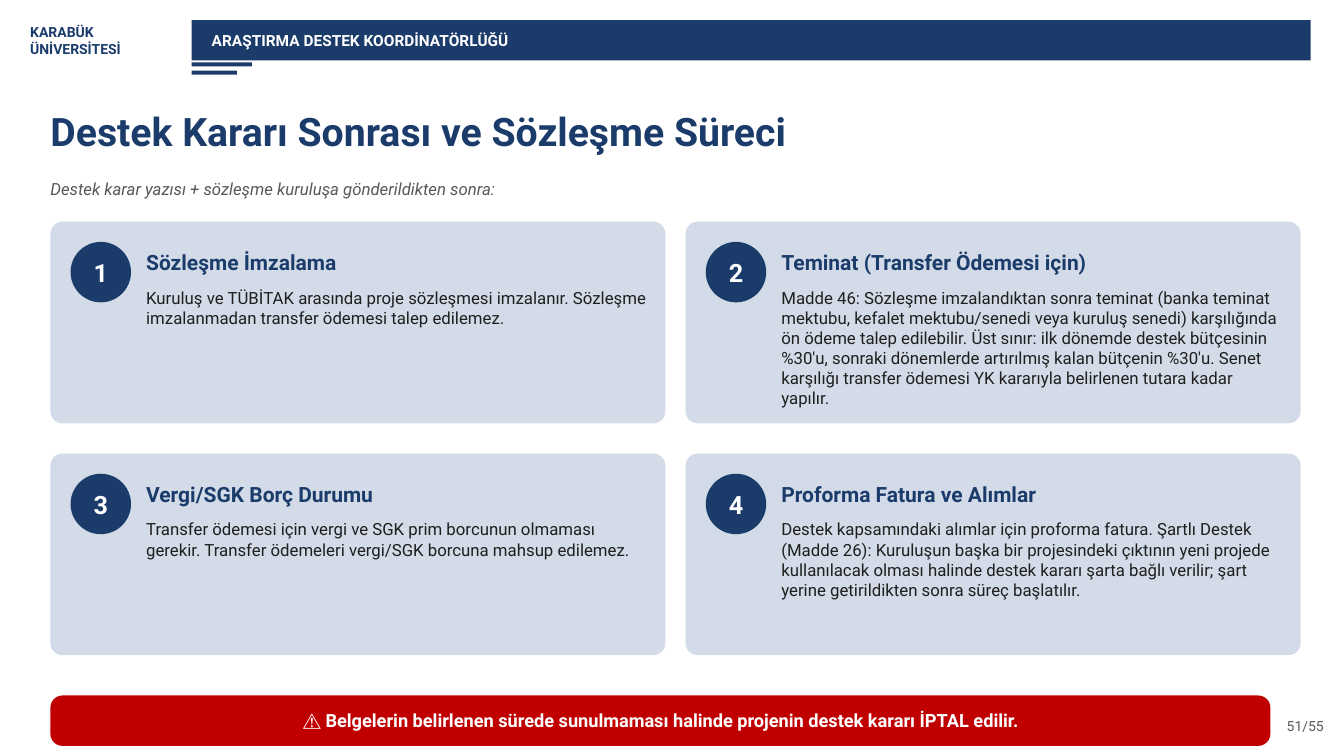
from pptx import Presentation
from pptx.dml.color import RGBColor
from pptx.enum.shapes import MSO_SHAPE as Shape
from pptx.enum.text import MSO_ANCHOR as Anchor, PP_ALIGN as Align
from pptx.util import Inches, Pt

# Content
UNIVERSITY = ["KARABÜK", "ÜNİVERSİTESİ"]
OFFICE = "ARAŞTIRMA DESTEK KOORDİNATÖRLÜĞÜ"
PAGE_NUMBER = "51/55"
TITLE = "Destek Kararı Sonrası ve Sözleşme Süreci"
SUBTITLE = "Destek karar yazısı + sözleşme kuruluşa gönderildikten sonra:"
STEPS = [
    ("Sözleşme İmzalama",
     "Kuruluş ve TÜBİTAK arasında proje sözleşmesi imzalanır. Sözleşme "
     "imzalanmadan transfer ödemesi talep edilemez."),
    ("Teminat (Transfer Ödemesi için)",
     "Madde 46: Sözleşme imzalandıktan sonra teminat (banka teminat mektubu, "
     "kefalet mektubu/senedi veya kuruluş senedi) karşılığında ön ödeme talep "
     "edilebilir. Üst sınır: ilk dönemde destek bütçesinin %30'u, sonraki "
     "dönemlerde artırılmış kalan bütçenin %30'u. Senet karşılığı transfer "
     "ödemesi YK kararıyla belirlenen tutara kadar yapılır."),
    ("Vergi/SGK Borç Durumu",
     "Transfer ödemesi için vergi ve SGK prim borcunun olmaması gerekir. "
     "Transfer ödemeleri vergi/SGK borcuna mahsup edilemez."),
    ("Proforma Fatura ve Alımlar",
     "Destek kapsamındaki alımlar için proforma fatura. Şartlı Destek (Madde "
     "26): Kuruluşun başka bir projesindeki çıktının yeni projede kullanılacak "
     "olması halinde destek kararı şarta bağlı verilir; şart yerine "
     "getirildikten sonra süreç başlatılır."),
]
WARNING = "⚠ Belgelerin belirlenen sürede sunulmaması halinde projenin destek kararı İPTAL edilir."

# Formats
COLORS = {"navy": "1B3C6B", "card": "D2DBE7", "red": "C00000",
          "white": "FFFFFF", "grey": "595959", "ink": "1F1F1F"}
FORMATS = {
    "university": ("navy", {"size": Pt(10), "bold": True}),
    "office": ("white", {"size": Pt(11), "bold": True}),
    "page": ("grey", {"size": Pt(10)}),
    "title": ("navy", {"size": Pt(28), "bold": True}),
    "subtitle": ("grey", {"size": Pt(12), "italic": True}),
    "number": ("white", {"size": Pt(18), "bold": True}),
    "heading": ("navy", {"size": Pt(15), "bold": True}),
    "body": ("ink", {"size": Pt(12)}),
    "warning": ("white", {"size": Pt(13), "bold": True}),
}

# Card grid
CARD_LEFT, CARD_TOP, CARD_WIDTH, CARD_HEIGHT = 0.5, 2.2, 6.1, 2
COLUMN_GAP, ROW_GAP, COLUMNS = 0.2, 0.3, 2

deck = Presentation()
deck.slide_width, deck.slide_height = Inches(13.33), Inches(7.5)
page = deck.slides.add_slide(deck.slide_layouts[6])


def write(box, lines, style, align=Align.LEFT, anchor=Anchor.MIDDLE, indent=0):
    frame = box.text_frame
    layout = {"word_wrap": True, "vertical_anchor": anchor, "margin_left": Inches(indent),
              "margin_top": 0, "margin_right": 0, "margin_bottom": 0}
    for name, value in layout.items():
        setattr(frame, name, value)
    color, values = FORMATS[style]
    for index, line in enumerate(lines):
        para = frame.paragraphs[0] if index == 0 else frame.add_paragraph()
        para.alignment = align
        span = para.add_run()
        span.text = line
        span.font.color.rgb = RGBColor.from_string(COLORS[color])
        for name, value in {"name": "Roboto", **values}.items():
            setattr(span.font, name, value)


def add_text(place, lines, style, **options):
    write(page.shapes.add_textbox(*map(Inches, place)), lines, style, **options)


def add_block(kind, place, color, radius=None):
    block = page.shapes.add_shape(kind, *map(Inches, place))
    block.shadow.inherit = False
    block.fill.solid()
    block.fill.fore_color.rgb = RGBColor.from_string(COLORS[color])
    block.line.fill.background()
    if radius is not None:
        block.adjustments[0] = radius
    return block


# Header
add_text((0.3, 0.15, 1.5, 0.5), UNIVERSITY, "university")
banner = add_block(Shape.RECTANGLE, (1.9, 0.2, 11.1, 0.4), "navy")
write(banner, [OFFICE], "office", indent=0.2)
for top, width in [(0.62, 0.6), (0.7, 0.45)]:
    add_block(Shape.RECTANGLE, (1.9, top, width, 0.04), "navy")

# Title and subtitle
add_text((0.5, 0.95, 12.3, 0.7), [TITLE], "title")
add_text((0.5, 1.65, 12.3, 0.45), [SUBTITLE], "subtitle")

# Numbered step cards
for index, (heading, body) in enumerate(STEPS):
    row, column = divmod(index, COLUMNS)
    left = CARD_LEFT + column * (CARD_WIDTH + COLUMN_GAP)
    top = CARD_TOP + row * (CARD_HEIGHT + ROW_GAP)
    add_block(Shape.ROUNDED_RECTANGLE, (left, top, CARD_WIDTH, CARD_HEIGHT), "card", 0.06)
    badge = add_block(Shape.OVAL, (left + 0.2, top + 0.2, 0.6, 0.6), "navy")
    write(badge, [str(index + 1)], "number", align=Align.CENTER)
    add_text((left + 0.95, top + 0.2, 5, 0.4), [heading], "heading")
    add_text((left + 0.95, top + 0.65, 5, 1.25), [body], "body", anchor=Anchor.TOP)

# Warning bar, ending clear of the page number
warning_bar = add_block(Shape.ROUNDED_RECTANGLE, (0.5, 6.9, 12.1, 0.5), "red", 0.24)
write(warning_bar, [WARNING], "warning", align=Align.CENTER)
add_text((12.63, 7.05, 0.5, 0.3), [PAGE_NUMBER], "page", align=Align.RIGHT)

deck.save("out.pptx")
